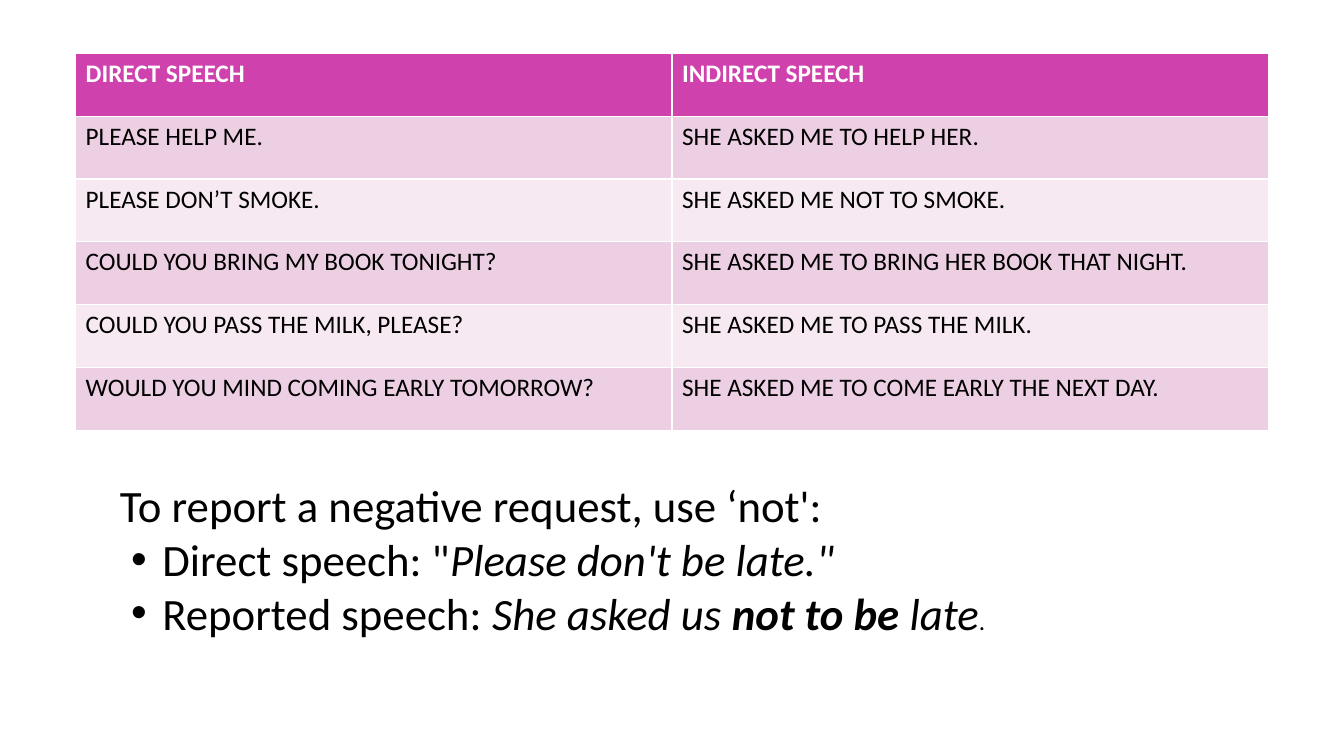
from pptx import Presentation
from pptx.dml.color import RGBColor
from pptx.enum import text
from pptx.oxml import parse_xml
from pptx.oxml.ns import nsdecls
from pptx.util import Inches, Pt

# Content
SPEECH = [
    ("DIRECT SPEECH", "INDIRECT SPEECH"),
    ("PLEASE HELP ME.", "SHE ASKED ME TO HELP HER."),
    ("PLEASE DON’T SMOKE.", "SHE ASKED ME NOT TO SMOKE."),
    ("COULD YOU BRING MY BOOK TONIGHT?", "SHE ASKED ME TO BRING HER BOOK THAT NIGHT."),
    ("COULD YOU PASS THE MILK, PLEASE?", "SHE ASKED ME TO PASS THE MILK."),
    ("WOULD YOU MIND COMING EARLY TOMORROW?", "SHE ASKED ME TO COME EARLY THE NEXT DAY."),
]
ITALIC = {"italic": True}
# Each line: bulleted or not, then its runs with their formats
RULE = [
    (False, [("To report a negative request, use ‘not':", {})]),
    (True, [("Direct speech: \"", {}), ("Please don't be late.\"", ITALIC)]),
    (True, [("Reported speech: ", {}), ("She asked us ", ITALIC),
            ("not to be ", {"italic": True, "bold": True}),
            ("late", ITALIC), (".", {"size": Pt(18)})]),
]

# Look
FONT = "Calibri"
WHITE = RGBColor(0xFF, 0xFF, 0xFF)
BLACK = RGBColor(0, 0, 0)
MAGENTA = RGBColor(0xCF, 0x41, 0xAD)
BANDS = [RGBColor(0xF6, 0xE9, 0xF1), RGBColor(0xED, 0xCF, 0xE3)]
TABLE_BOX = [Inches(v) for v in (0.75, 0.53, 11.83, 3.74)]
RULE_BOX = [Inches(v) for v in (1.09, 4.69, 9.83, 1.72)]
BULLET_AT, TEXT_AT = Inches(0.11), Inches(0.42)


def set_font(font, color, **formats):
    font.color.rgb = color
    for name, value in {"name": FONT, **formats}.items():
        setattr(font, name, value)


prs = Presentation()
prs.slide_width, prs.slide_height = Inches(13.33), Inches(7.5)
s = prs.slides.add_slide(prs.slide_layouts[1])
title = s.shapes.title
title.element.getparent().remove(title.element)

# Table of direct and indirect speech
table = s.shapes.add_table(len(SPEECH), len(SPEECH[0]), *TABLE_BOX).table
for i, row in enumerate(SPEECH):
    header = i == 0
    for j, words in enumerate(row):
        cell = table.cell(i, j)
        cell.text = words
        cell.fill.solid()
        cell.fill.fore_color.rgb = MAGENTA if header else BANDS[i % 2]
        set_font(cell.text_frame.paragraphs[0].runs[0].font,
                 WHITE if header else BLACK, size=Pt(18), bold=header)

# Rule for negative requests
body = s.placeholders[1]
body.left, body.top, body.width, body.height = RULE_BOX
tf = body.text_frame
tf.word_wrap = True
tf.auto_size = text.MSO_AUTO_SIZE.SHAPE_TO_FIT_TEXT
for i, (bulleted, runs) in enumerate(RULE):
    p = tf.paragraphs[0] if i == 0 else tf.add_paragraph()
    pPr = p._p.get_or_add_pPr()
    pPr.set("marL", str(TEXT_AT if bulleted else 0))
    pPr.set("indent", str(BULLET_AT - TEXT_AT if bulleted else 0))
    bullet = 'a:buChar {} char="•"' if bulleted else "a:buNone {}"
    pPr.append(parse_xml("<" + bullet.format(nsdecls("a")) + "/>"))
    p.space_before = Pt(0)
    for words, formats in runs:
        r = p.add_run()
        r.text = words
        set_font(r.font, BLACK, **{"size": Pt(32), **formats})

prs.save("out.pptx")
